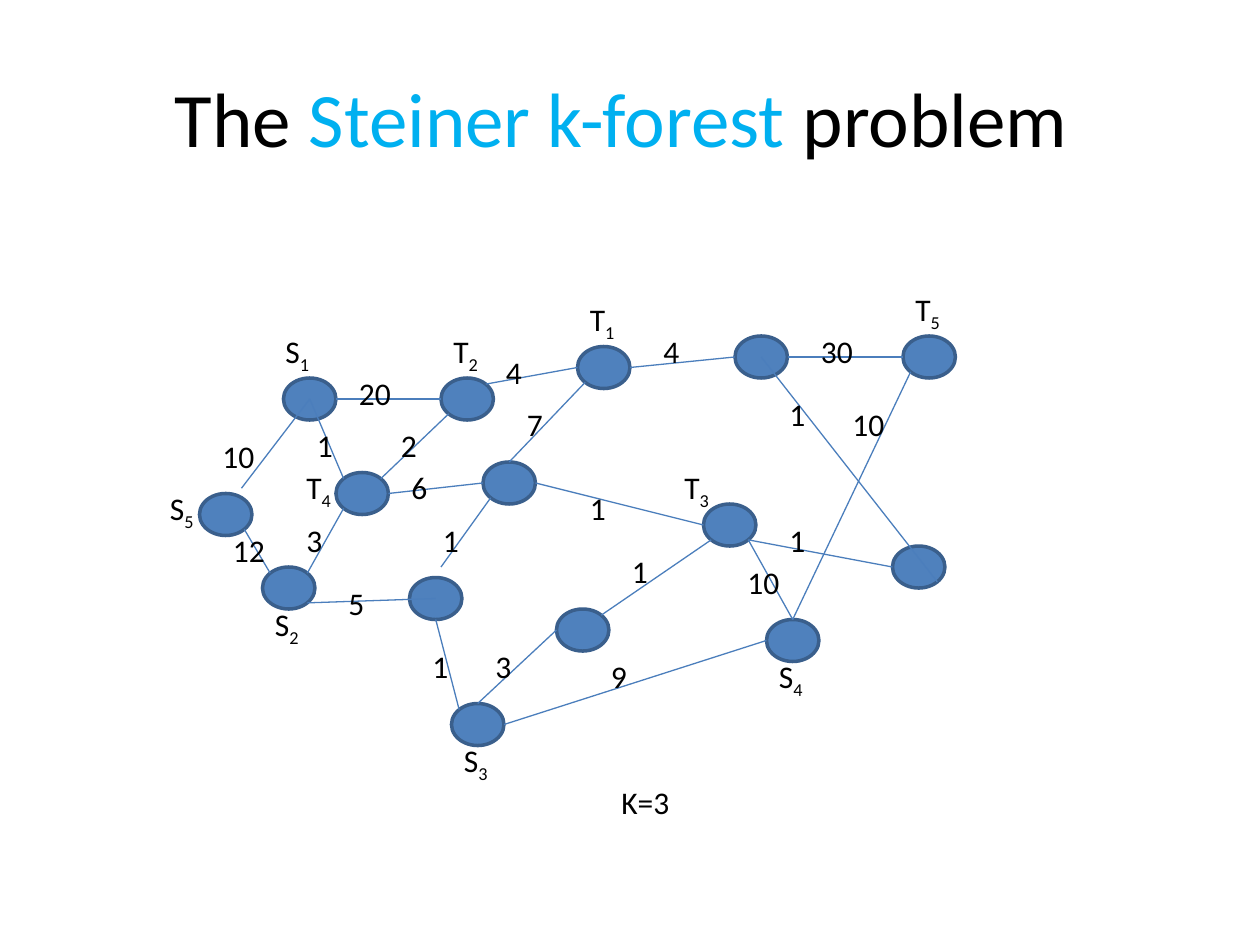
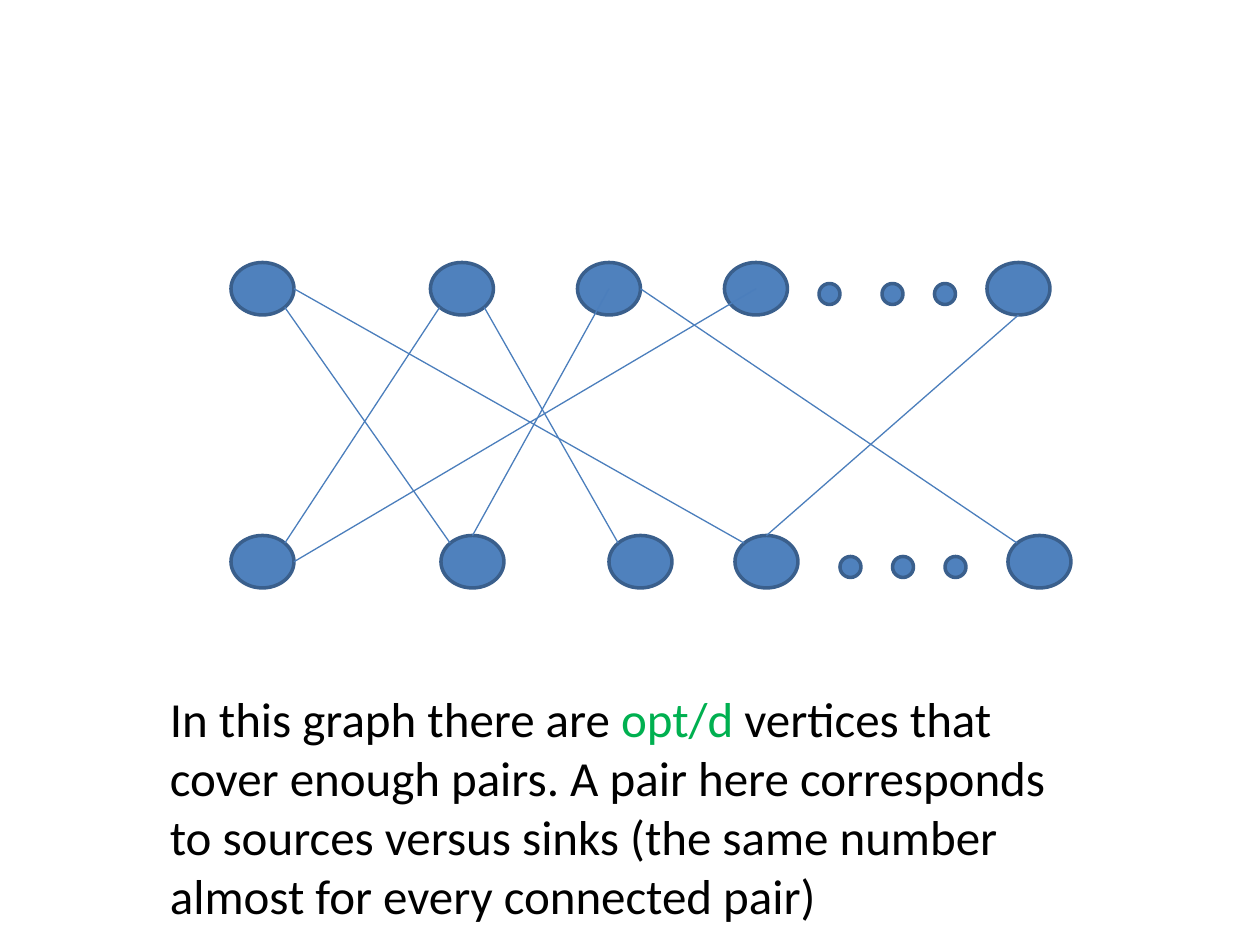
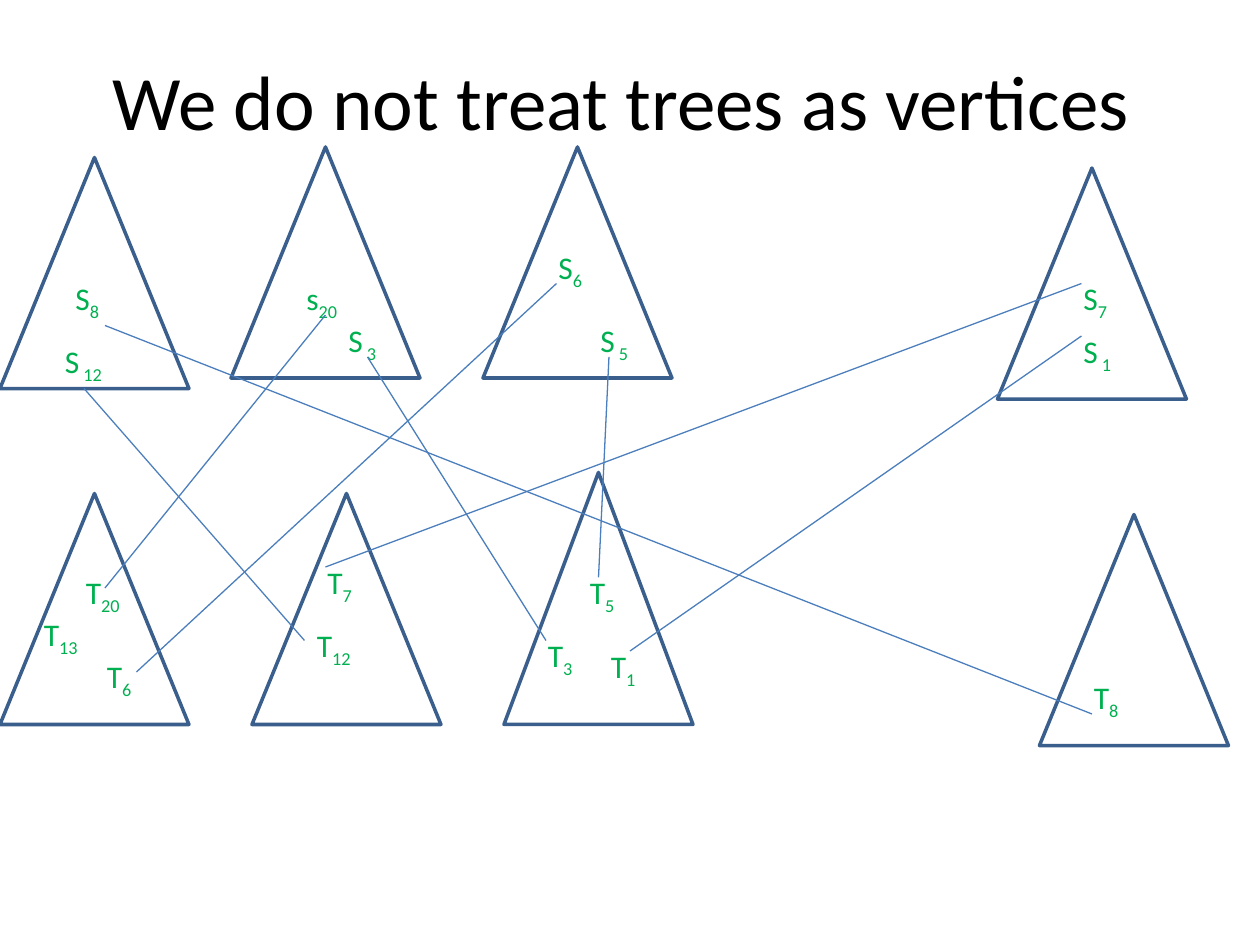
import pptx
import pptx.util
import pptx.dml.color
import pptx.enum.shapes
import pptx.enum.text
import pptx.oxml.ns
import lxml.etree

Pt = pptx.util.Pt
qn = pptx.oxml.ns.qn
KIND = pptx.enum.shapes.MSO_SHAPE
WIDTH, HEIGHT, GRID = 720, 540, 6
FONT = "Calibri"
BLACK, CYAN, GREEN = "000000", "00B0F0", "00B050"
FILL, RIM, EDGE = "4F81BD", "3A5F8C", "4B7EBC"

NEAR, FAR = 0.146, 0.854
SITES = {
    "top": (0.5, 0), "top left": (NEAR, NEAR),
    "left": (0, 0.5), "bottom left": (NEAR, FAR),
    "bottom": (0.5, 1), "bottom right": (FAR, FAR),
    "right": (1, 0.5), "top right": (FAR, NEAR),
    "centre": (0.5, 0.5),
}
JOINTS = list(SITES)[:8]

ABOVE, BELOW, LEFT = (0, -30), (0, 18), (-24, -6)
WEIGHT = (-22, -16)


def tint(target, code):
    target.rgb = pptx.dml.color.RGBColor.from_string(code)


def shape(slide, kind, x, y, w, h, fill=None):
    item = slide.shapes.add_shape(kind, Pt(x), Pt(y), Pt(w), Pt(h))
    item.shadow.inherit = False
    if fill:
        item.fill.solid()
        tint(item.fill.fore_color, fill)
    else:
        item.fill.background()
    tint(item.line.color, RIM)
    item.line.width = Pt(2)
    return item


def node(slide, x, y, w, h):
    return shape(slide, KIND.OVAL, x, y, w, h, FILL)


def line(slide, start, stop):
    item = slide.shapes.add_connector(
        pptx.enum.shapes.MSO_CONNECTOR.STRAIGHT, *map(Pt, start + stop))
    tint(item.line.color, EDGE)
    item.line.width = Pt(0.75)
    lxml.etree.SubElement(item._element.spPr, qn("a:effectLst"))
    return item


def locate(nodes, end):
    if isinstance(end, tuple):
        return end
    name, site = end.split(maxsplit=1)
    item, (across, down) = nodes[name], SITES[site]
    return (item.left.pt + across * item.width.pt,
            item.top.pt + down * item.height.pt)


def glue(item, nodes, tag, end):
    if isinstance(end, tuple):
        return
    name, site = end.split(maxsplit=1)
    if site in JOINTS:
        lxml.etree.SubElement(
            item._element.find(".//" + qn("p:cNvCxnSpPr")), qn(tag),
            id=str(nodes[name].shape_id), idx=str(JOINTS.index(site)))


def join(slide, nodes, start, stop):
    first, last = locate(nodes, start), locate(nodes, stop)
    item = line(slide, first, last)
    glue(item, nodes, "a:stCxn", start)
    glue(item, nodes, "a:endCxn", stop)
    return [(a + b) / 2 for a, b in zip(first, last)]


def text(slide, parts, x, y, w, h, size):
    box = slide.shapes.add_textbox(Pt(x), Pt(y), Pt(w), Pt(h))
    box.text_frame.word_wrap = True
    for words, code in parts:
        run = box.text_frame.paragraphs[0].add_run()
        run.text = words
        run.font.name = FONT
        run.font.size = Pt(size)
        tint(run.font.color, code)
    return box.text_frame


def label(slide, x, y, base, index="", code=BLACK):
    parts = [(words, code) for words in (base, index) if words]
    frame = text(slide, parts, x, y, min(144, WIDTH - x), 29, 18)
    for run in frame.paragraphs[0].runs[1:]:
        run._r.get_or_add_rPr().set("baseline", "-25000")


def title(slide, y, *parts):
    frame = text(slide, parts, 36, y, WIDTH - 72, 90, 44)
    frame.vertical_anchor = pptx.enum.text.MSO_ANCHOR.MIDDLE
    frame.paragraphs[0].alignment = pptx.enum.text.PP_ALIGN.CENTER


def weigh(slide, middle, weight, nudge):
    x, y = (round((m + w) / GRID) * GRID + n
            for m, w, n in zip(middle, WEIGHT, nudge))
    label(slide, x, y, weight)


def forest(slide):
    title(slide, 21.6, ("The ", BLACK), ("Steiner k-forest ", CYAN),
          ("problem ", BLACK))
    places = {
        "S1": (162, 216, (-6, -30)), "T1": (330, 198, ABOVE),
        "S2": (150, 324, BELOW), "T2": (252, 216, ABOVE),
        "S3": (258, 402, BELOW), "T3": (402, 288, (-18, -24)),
        "S4": (438, 354, BELOW), "T4": (192, 270, LEFT),
        "S5": (114, 282, LEFT), "T5": (516, 192, ABOVE),
        "A": (276, 264, None), "B": (420, 192, None), "C": (234, 330, None),
        "D": (318, 348, None), "E": (510, 312, None),
    }
    edges = [
        ("S1 right", "T2 left", "20"),
        ("S1 centre", "T4 top left", "1", 12, 6),
        ("S1 centre", (138, 279), "10", -18, 6),
        ("S2 top left", "S5 bottom right", "12"),
        ("S2 top right", "T4 bottom left", "3", 6, 0),
        ("S2 bottom right", "C centre", "5"),
        ("T4 top right", "T2 bottom left", "2", 6, 0),
        ("T4 right", "A left", "6"),
        ("T2 top right", "T1 left", "4"),
        ("T1 right", "B left", "4", 6, -6),
        ("B right", "T5 left", "30"),
        ("A top", "T1 bottom left", "7", 6, 0),
        ("A bottom left", (252, 324), "1", 0, 6),
        ("A right", "T3 left", "1", 0, 6),
        ("D top right", "T3 bottom left", "1"),
        ("T3 bottom right", "E left", "1", 0, -6),
        ("S4 top", "T3 bottom right", "10"),
        ("S4 top", "T5 bottom left", "10", 18, -42),
        ("S3 top left", "C bottom", "1", 6, 0),
        ("S3 top", "D left", "3"),
        ("S3 right", "S4 left", "9"),
        ("E bottom right", "B centre", "1", -18, -30),
    ]
    nodes = {name: node(slide, x, y, 30, 24)
             for name, (x, y, side) in places.items()}
    for start, stop, weight, *nudge in edges:
        middle = join(slide, nodes, start, stop)
        weigh(slide, middle, weight, nudge or (0, 0))
    for name, (x, y, side) in places.items():
        if side:
            label(slide, x + side[0], y + side[1], *name)
    label(slide, 348, 444, "K=3")


def pairs(slide):
    rows = {
        "U": (150, (132, 246, 330, 414, 564), (468, 504, 534)),
        "L": (306, (132, 252, 348, 420, 576), (480, 510, 540)),
    }
    edges = [
        ("U1 bottom right", "L2 top left"), ("U1 right", "L4 top left"),
        ("L1 top right", "U2 bottom left"), ("L1 right", "U4 centre"),
        ("U2 bottom right", "L3 top left"), ("U3 right", "L5 top left"),
        ("L4 top", "U5 bottom"), ("L2 top", "U3 centre"),
    ]
    nodes = {}
    for row, (y, lefts, dots) in rows.items():
        for count, x in enumerate(lefts, 1):
            nodes[f"{row}{count}"] = node(slide, x, y, 36, 30)
        for x in dots:
            node(slide, x, y + 12, 12, 12)
    for start, stop in edges:
        join(slide, nodes, start, stop)
    text(slide, [
        ("In this graph there are ", BLACK), ("opt/d", GREEN),
        (" vertices that cover enough pairs. A pair here corresponds to sources "
         "versus sinks (the same number almost for every connected pair)", BLACK),
    ], 90, 390, 534, 143, 28)


def tree(slide, x, y, h, leaves):
    shape(slide, KIND.ISOSCELES_TRIANGLE, x, y, 108, h)
    ports = {}
    for base, index, right, down, port in leaves:
        left, top = x + right, y + down
        label(slide, left, top, base, index, GREEN)
        if port:
            ports[index.strip()] = (left + port[0], top + port[1])
    return ports


def trees(slide):
    title(slide, 12, ("We do not treat trees as vertices ", BLACK))
    upper = [
        (0, 90, 132, [("S", "8", 36, 66, (24, 30)), ("S", " 12", 30, 102, (18, 30))]),
        (132, 84, 132, [("s", "20", 36, 72, (18, 24)), ("S", " 3", 60, 96, (18, 24))]),
        (276, 84, 132, [("S", "6", 36, 54, (6, 24)), ("S", " 5", 60, 96, (12, 24))]),
        (570, 96, 132, [("S", "7", 42, 60, (6, 6)), ("S", " 1", 42, 90, (6, 6))]),
    ]
    lower = [
        (0, 282, 132, [("T", "20", 42, 42, (18, 12)), ("T", "13", 18, 66, None),
                       ("T", "6", 54, 90, (24, 12))]),
        (144, 282, 132, [("T", "7", 36, 36, (6, 6)), ("T", "12", 30, 72, (0, 12))]),
        (288, 270, 144, [("T", "5", 42, 54, (12, 6)), ("T", "3", 18, 90, (6, 6)),
                         ("T", "1", 54, 96, (18, 6))]),
        (594, 294, 132, [("T", "8", 24, 90, (6, 24))]),
    ]
    sources, sinks = {}, {}
    for ports, group in ((sources, upper), (sinks, lower)):
        for item in group:
            ports.update(tree(slide, *item))
    for index, start in sources.items():
        line(slide, start, sinks[index])


def main():
    deck = pptx.Presentation()
    deck.slide_width, deck.slide_height = Pt(WIDTH), Pt(HEIGHT)
    for draw in (forest, pairs, trees):
        draw(deck.slides.add_slide(deck.slide_layouts[6]))
    deck.save("out.pptx")


if __name__ == "__main__":
    main()
